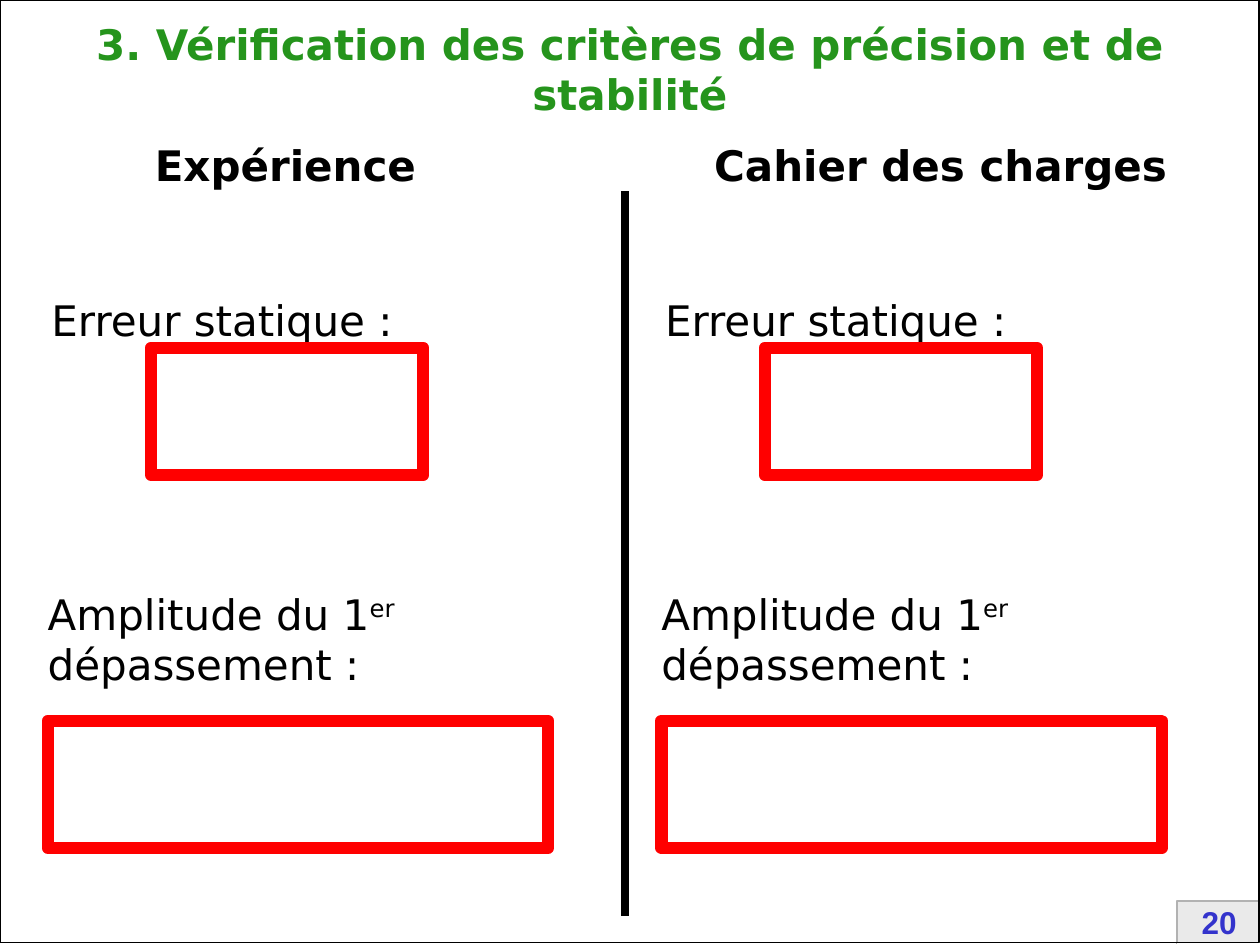
from lxml import etree
from pptx import Presentation
from pptx.dml.color import RGBColor
from pptx.enum import shapes, text
from pptx.oxml.ns import qn
from pptx.util import Inches, Pt

COLORS = {
    "title": "25941C", "ink": "000000", "answer": "FF0000", "number": "3333CC",
    "tab": "EAEAEA", "tab_shade": "B2B2B2", "tab_light": "FFFFFF",
}


def color(name):
    return RGBColor.from_string(COLORS[name])


def add_text(page, left, top, width, height, parts, tint="ink", size=24,
             font="DejaVu Sans", bold=False, align=text.PP_ALIGN.LEFT):
    """Add one paragraph; parts are (wording, is_superscript) pairs."""
    box = page.shapes.add_textbox(Inches(left), Inches(top), Inches(width), Inches(height))
    frame = box.text_frame
    frame.word_wrap = True
    frame.vertical_anchor = text.MSO_ANCHOR.MIDDLE
    para = frame.paragraphs[0]
    para.alignment = align
    para.font.name, para.font.size, para.font.bold = font, Pt(size), bold
    para.font.color.rgb = color(tint)
    for wording, superscript in parts:
        span = para.add_run()
        span.text = wording
        if superscript:
            span._r.get_or_add_rPr().set("baseline", "30000")


def add_rectangle(page, left, top, width, height, line=None, weight=1, fill=None):
    box = page.shapes.add_shape(shapes.MSO_SHAPE.RECTANGLE, Inches(left), Inches(top),
                                Inches(width), Inches(height))
    box.shadow.inherit = False
    if fill:
        box.fill.solid()
        box.fill.fore_color.rgb = color(fill)
    else:
        box.fill.background()
    if line:
        box.line.color.rgb = color(line)
        box.line.width = Pt(weight)
    else:
        box.line.fill.background()


def add_edge(page, points, tint):
    start, *rest = [(Inches(x), Inches(y)) for x, y in points]
    builder = page.shapes.build_freeform(*start)
    builder.add_line_segments(rest, close=False)
    edge = builder.convert_to_shape()
    edge.shadow.inherit = False
    edge.fill.background()
    edge.line.color.rgb = color(tint)
    edge.line.width = Pt(1)


def add_page_number(page, left, top, width, height, number):
    right, bottom = left + width, top + height
    add_rectangle(page, left, top, width, height, fill="tab")
    add_edge(page, [(right, top), (left, top), (left, bottom)], "tab_shade")
    add_edge(page, [(right, top), (right, bottom), (left, bottom)], "tab_light")
    add_text(page, left + 0.04, top - 0.03, width - 0.06, 0.4, [(number, False)],
             "number", 18, "Arial", True, text.PP_ALIGN.CENTER)


def add_divider(page, x, top, bottom):
    line = page.shapes.add_connector(shapes.MSO_CONNECTOR.STRAIGHT, Inches(x), Inches(top),
                                     Inches(x), Inches(bottom))
    line.line.color.rgb = color("ink")
    line.line.width = Pt(5)
    etree.SubElement(line._element.spPr, qn("a:effectLst"))


def add_column(page, left, top, heading, heading_offset, heading_width):
    """Add a heading and two criteria, each with an empty answer frame."""
    add_text(page, left + heading_offset, top, heading_width, 0.5, [(heading, False)], bold=True)
    add_text(page, left + 0.03, top + 1.23, 4.48, 0.5, [("Erreur statique :", False)])
    add_text(page, left, top + 3.56, 4.48, 0.9,
             [("Amplitude du 1", False), ("er", True), (" dépassement :", False)])
    add_rectangle(page, left + 0.92, top + 1.7, 2.16, 1.01, "answer", 7)
    add_rectangle(page, left + 0.1, top + 4.66, 3.97, 1.01, "answer", 7)


def main():
    deck = Presentation()
    deck.slide_width, deck.slide_height = Inches(10), Inches(7.5)
    page = deck.slides.add_slide(deck.slide_layouts[6])
    add_page_number(page, 9.34, 7.15, 0.65, 0.34, "20")
    add_rectangle(page, 0, 0, 9.99, 7.48, "ink")
    add_divider(page, 4.96, 1.52, 7.27)
    add_column(page, 0.28, 1.06, "Expérience", 0.85, 2.95)
    add_column(page, 5.15, 1.06, "Cahier des charges", 0.42, 4.07)
    add_text(page, 0, 0.09, 10, 0.91,
             [("3. Vérification des critères de précision et de stabilité", False)],
             "title", bold=True, align=text.PP_ALIGN.CENTER)
    deck.save("out.pptx")


if __name__ == "__main__":
    main()
